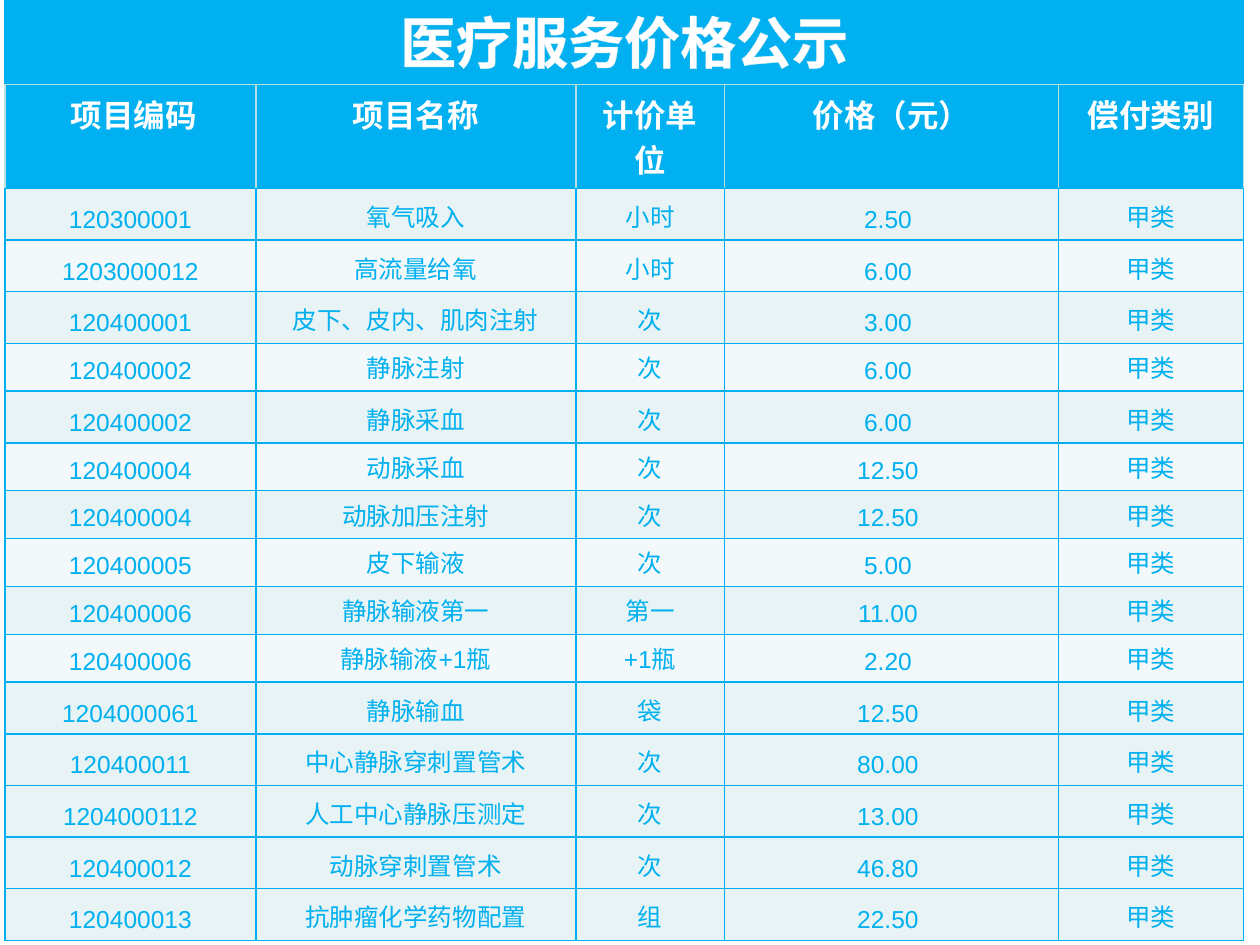
"""Build a one-page price list of medical services."""
from dataclasses import dataclass

from lxml.etree import SubElement
from pptx import Presentation
from pptx.dml.color import RGBColor
from pptx.enum.text import MSO_ANCHOR, PP_ALIGN
from pptx.oxml.ns import qn
from pptx.util import Inches, Pt


@dataclass(frozen=True)
class Theme:
    """Colours, font and type sizes of the page."""
    font: str = "Arial"
    blue: str = "00B0F0"
    white: str = "FFFFFF"
    rule: str = "BBE0E3"
    outline: str = "D9EDEE"
    band: str = "E7F3F4"
    pale: str = "F3F9FA"
    title_size: int = 32
    header_size: int = 18
    body_size: int = 14


TITLE = "医疗服务价格公示"
HEADERS = (" 项目编码", "项目名称", "计价单位", "价格（元）", "偿付类别")
CATEGORY = "甲类"
SERVICES = (
    ("120300001", "氧气吸入", "小时", "2.50 "),
    ("1203000012", "高流量给氧", "小时", "6.00 "),
    ("120400001", "皮下、皮内、肌肉注射", "次", "3.00 "),
    ("120400002", "静脉注射", "次", "6.00 "),
    ("120400002", "静脉采血", "次", "6.00 "),
    ("120400004", "动脉采血", "次", "12.50 "),
    ("120400004", "动脉加压注射", "次", "12.50 "),
    ("120400005", "皮下输液", "次", "5.00 "),
    ("120400006", "静脉输液第一", "第一", "11.00 "),
    ("120400006", "静脉输液+1瓶", "+1瓶", "2.20 "),
    ("1204000061", "静脉输血", "袋", "12.50 "),
    ("120400011", "中心静脉穿刺置管术", "次", "80.00 "),
    ("1204000112", "人工中心静脉压测定", "次", "13.00 "),
    ("120400012", "动脉穿刺置管术", "次", "46.80 "),
    ("120400013", "抗肿瘤化学药物配置", "组", "22.50 "),
)
COLUMN_WIDTHS = (1.99, 2.54, 1.18, 2.65, 1.47)
TALL, SHORT = 0.41, 0.38
ROW_HEIGHTS = (0.58, 0.7, *[TALL] * 3, SHORT, TALL, *[SHORT] * 5, *[TALL] * 5)
PALE_ROWS = range(1, 10, 2)


class PriceList:
    """Hold the theme and the current page, and draw the table parts."""

    def __init__(self, deck, theme):
        """Add a blank page to the deck."""
        self.theme = theme
        self.page = deck.slides.add_slide(deck.slide_layouts[6])

    def table(self, left, top, widths, heights):
        """Add a plain table with the given column widths and row heights."""
        frame = self.page.shapes.add_table(
            len(heights), len(widths), Inches(left), Inches(top),
            Inches(sum(widths)), Inches(sum(heights)))
        table = frame.table
        table.first_row = table.horz_banding = False
        for column, width in zip(table.columns, widths):
            column.width = Inches(width)
        for row, height in zip(table.rows, heights):
            row.height = Inches(height)
        return table

    def borders(self, cell, **colours):
        """Draw one-point cell borders, blue unless a side is named."""
        properties = cell._tc.get_or_add_tcPr()
        for place, side in enumerate("LRTB"):
            line = SubElement(properties, qn(f"a:ln{side}"), w=str(Pt(1)))
            fill = SubElement(line, qn("a:solidFill"))
            SubElement(fill, qn("a:srgbClr"), val=colours.get(side, self.theme.blue))
            properties.insert(place, line)

    def text(self, cell, words, size, colour, bold=False):
        """Write one centred run into a cell."""
        para = cell.text_frame.paragraphs[0]
        para.alignment = PP_ALIGN.CENTER
        span = para.add_run()
        span.text = words
        span.font.name = self.theme.font
        span.font.size = Pt(size)
        span.font.bold = bold
        span.font.color.rgb = RGBColor.from_string(colour)
        return para, span

    def fill(self, cell, colour):
        """Fill a cell with one colour."""
        cell.fill.solid()
        cell.fill.fore_color.rgb = RGBColor.from_string(colour)

    def title(self, cells, words):
        """Merge a row of cells into the outlined title."""
        theme = self.theme
        cells[0].merge(cells[-1])
        for cell in cells:
            self.fill(cell, theme.blue)
            self.borders(cell, B=theme.rule)
        cells[0].vertical_anchor = MSO_ANCHOR.MIDDLE
        para, span = self.text(cells[0], words, theme.title_size, theme.white, True)
        para.line_spacing = 0.9
        properties = span.font._element
        line = SubElement(properties, qn("a:ln"), w=str(Pt(0.8)))
        fill = SubElement(line, qn("a:solidFill"))
        SubElement(fill, qn("a:srgbClr"), val=theme.outline)
        properties.insert(0, line)

    def header(self, cell, words):
        """Write a column heading."""
        theme = self.theme
        self.fill(cell, theme.blue)
        self.borders(cell, L=theme.rule, R=theme.rule, T=theme.rule)
        self.text(cell, words, theme.header_size, theme.white, True)

    def entry(self, cell, words, colour):
        """Write a body cell on the given band colour."""
        self.fill(cell, colour)
        self.borders(cell)
        cell.margin_left = cell.margin_right = cell.margin_top = Inches(0.01)
        cell.margin_bottom = Inches(0.05)
        cell.vertical_anchor = MSO_ANCHOR.BOTTOM
        self.text(cell, words, self.theme.body_size, self.theme.blue)


def main():
    """Build the deck and save it."""
    deck = Presentation()
    deck.slide_width, deck.slide_height = Inches(10), Inches(7.5)
    theme = Theme()
    prices = PriceList(deck, theme)
    table = prices.table(0.04, -0.01, COLUMN_WIDTHS, ROW_HEIGHTS)
    title_row, header_row, *service_rows = [list(row.cells) for row in table.rows]
    prices.title(title_row, TITLE)
    for cell, words in zip(header_row, HEADERS):
        prices.header(cell, words)
    for number, (cells, service) in enumerate(zip(service_rows, SERVICES)):
        colour = theme.pale if number in PALE_ROWS else theme.band
        for cell, words in zip(cells, (*service, CATEGORY)):
            prices.entry(cell, words, colour)
    deck.save("out.pptx")


if __name__ == "__main__":
    main()
